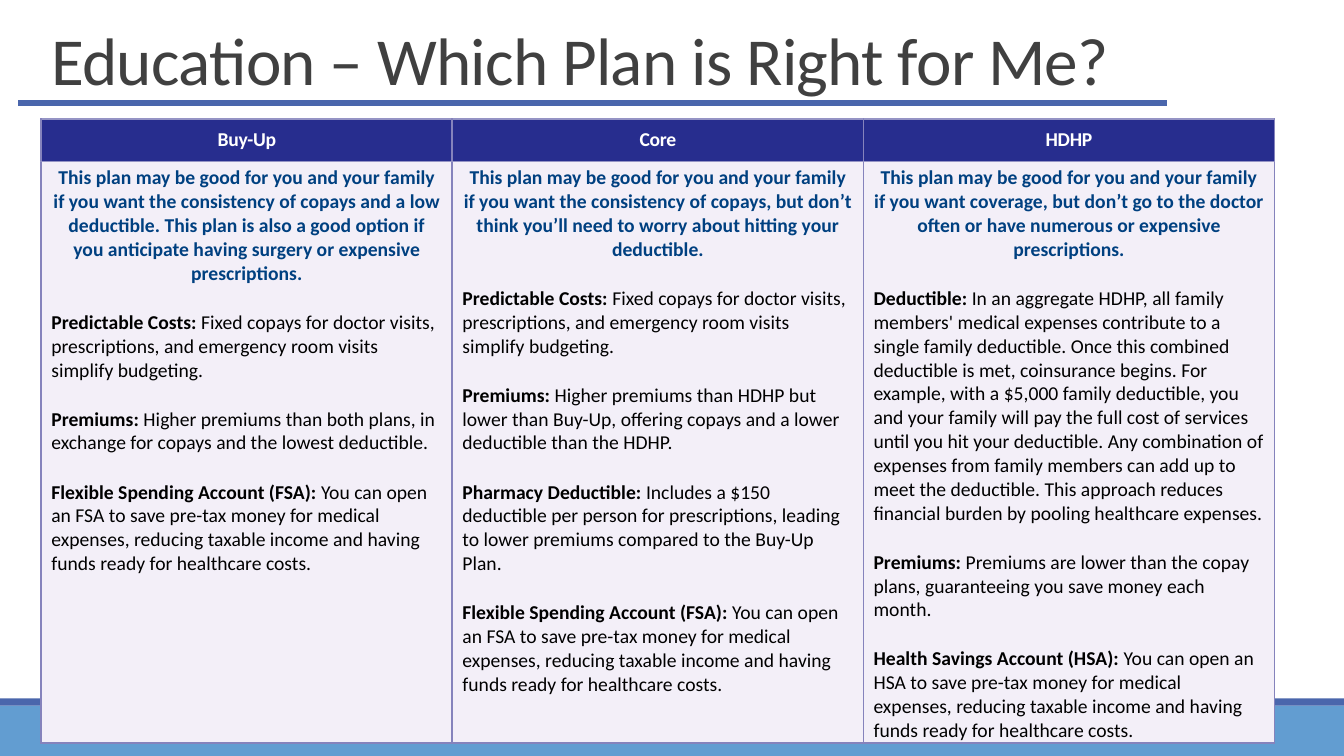
from lxml.etree import SubElement
from pptx import Presentation
from pptx.dml.color import RGBColor
from pptx.enum.shapes import MSO_CONNECTOR, MSO_SHAPE
from pptx.enum.text import MSO_ANCHOR, MSO_AUTO_SIZE, PP_ALIGN
from pptx.oxml.ns import qn
from pptx.util import Cm, Pt

FONT = "Calibri"
BLUE, SKY, NAVY, LILAC = "4A66AC", "629DD1", "272D8E", "F3EFF8"
SIDE, TOP = ("8583BC", 1.5), ("9594C5", 1)

VISITS = ("Fixed copays for doctor visits, prescriptions, and emergency room "
          "visits simplify budgeting.")
SAVINGS = ("You can open an {} to save pre-tax money for medical expenses, reducing "
           "taxable income and having funds ready for healthcare costs.")
FSA = ("Flexible Spending Account (FSA):", SAVINGS.format("FSA"))
HSA = ("Health Savings Account (HSA):", SAVINGS.format("HSA"))
GOOD_FOR = "This plan may be good for you and your family if you want "

# Each plan: name, summary, labelled points
PLANS = [
    ("Buy-Up",
     GOOD_FOR + "the consistency of copays and a low deductible. This plan is also a "
     "good option if you anticipate having surgery or expensive prescriptions.",
     [("Predictable Costs:", VISITS),
      ("Premiums:", "Higher premiums than both plans, in exchange for copays and the "
       "lowest deductible."),
      FSA]),
    ("Core",
     GOOD_FOR + "the consistency of copays, but don’t think you’ll need to worry "
     "about hitting your deductible.",
     [("Predictable Costs:", VISITS),
      ("Premiums:", "Higher premiums than HDHP but lower than Buy-Up, offering copays "
       "and a lower deductible than the HDHP."),
      ("Pharmacy Deductible:", "Includes a $150 deductible per person for "
       "prescriptions, leading to lower premiums compared to the Buy-Up Plan."),
      FSA]),
    ("HDHP",
     GOOD_FOR + "coverage, but don’t go to the doctor often or have numerous or "
     "expensive prescriptions.",
     [("Deductible:", "In an aggregate HDHP, all family members' medical expenses "
       "contribute to a single family deductible. Once this combined deductible is "
       "met, coinsurance begins. For example, with a $5,000 family deductible, you and "
       "your family will pay the full cost of services until you hit your deductible. "
       "Any combination of expenses from family members can add up to meet the "
       "deductible. This approach reduces financial burden by pooling healthcare "
       "expenses."),
      ("Premiums:", "Premiums are lower than the copay plans, guaranteeing you save "
       "money each month."),
      HSA]),
]


def rgb(color):
    return RGBColor.from_string(color)


def set_font(font, size, color, bold=None):
    font.name, font.size, font.bold = FONT, Pt(size), bold
    font.color.rgb = rgb(color)


def add_run(p, text, spacing=0):
    """Add a run whose letter spacing is given in points."""
    r = p.add_run()
    r.text = text
    if spacing:
        r.font._element.set("spc", str(round(spacing * 100)))
    return r


def add_band(slide, x, y, w, h, color):
    sp = slide.shapes.add_shape(MSO_SHAPE.RECTANGLE, Cm(x), Cm(y), Cm(w), Cm(h))
    sp.shadow.inherit = False
    sp.fill.solid()
    sp.fill.fore_color.rgb = rgb(color)
    sp.line.fill.background()


def add_footer(slide, x, y, w, h):
    edge = 0.18
    add_band(slide, x, y + edge, w, h - edge, SKY)
    add_band(slide, x, y, w, edge, BLUE)


def add_title(slide, x, y, w, h, text):
    title = slide.shapes.title
    title.left, title.top, title.width, title.height = Cm(x), Cm(y), Cm(w), Cm(h)
    tf = title.text_frame
    tf.auto_size = MSO_AUTO_SIZE.NONE
    tf.vertical_anchor = MSO_ANCHOR.BOTTOM
    p = tf.paragraphs[0]
    p.alignment, p.line_spacing = PP_ALIGN.LEFT, 0.85
    set_font(p.font, 48, "404040")
    add_run(p, text, -0.5)

    rule_y = Cm(y + h - 0.03)
    rule = slide.shapes.add_connector(
        MSO_CONNECTOR.STRAIGHT, Cm(x - 0.58), rule_y, Cm(x + 28.37), rule_y)
    rule.line.color.rgb = rgb(BLUE)
    rule.line.width = Pt(4)
    SubElement(rule._element.spPr, qn("a:effectLst"))


def style_cell(cell, fill, top, bottom):
    """Set borders, then fill, in the order the cell's XML needs."""
    tcPr = cell._tc.get_or_add_tcPr()
    for side, (color, width) in zip("LRTB", (SIDE, SIDE, top, bottom)):
        ln = SubElement(tcPr, qn(f"a:ln{side}"), w=str(Pt(width)))
        SubElement(SubElement(ln, qn("a:solidFill")), qn("a:srgbClr"), val=color)
    cell.fill.solid()
    cell.fill.fore_color.rgb = rgb(fill)


def fill_header(cell, name):
    style_cell(cell, NAVY, TOP, TOP)
    cell.vertical_anchor = MSO_ANCHOR.MIDDLE
    cell.margin_top = cell.margin_bottom = 0
    p = cell.text_frame.paragraphs[0]
    p.alignment = PP_ALIGN.CENTER
    set_font(p.font, 14, "FFFFFF", True)
    add_run(p, name, -0.2)


def fill_body(cell, summary, points):
    style_cell(cell, LILAC, TOP, SIDE)
    cell.vertical_anchor = MSO_ANCHOR.TOP
    cell.margin_top, cell.margin_bottom = Cm(0.13), 0
    tf = cell.text_frame
    p = tf.paragraphs[0]
    p.alignment = PP_ALIGN.CENTER
    set_font(p.font, 14, "004080", True)
    add_run(p, summary)
    for label, text in points:
        p = tf.add_paragraph()
        p.space_before = Pt(18)
        set_font(p.font, 14, "000000", False)
        add_run(p, label).font.bold = True
        add_run(p, " " + text)


def add_plan_table(slide, x, y, w, h):
    header_h = 1.06
    table = slide.shapes.add_table(
        2, len(PLANS), Cm(x), Cm(y), Cm(w), Cm(h)).table
    table.rows[0].height, table.rows[1].height = Cm(header_h), Cm(h - header_h)
    for col, (name, summary, points) in enumerate(PLANS):
        table.columns[col].width = Cm(w / len(PLANS))
        fill_header(table.cell(0, col), name)
        fill_body(table.cell(1, col), summary, points)


def main():
    prs = Presentation()
    prs.slide_width, prs.slide_height = Cm(33.87), Cm(19.05)
    slide = prs.slides.add_slide(prs.slide_layouts[5])
    add_footer(slide, 0, 17.6, 33.87, 1.45)
    add_title(slide, 1.04, 1, 32.83, 1.62, "Education – Which Plan is Right for Me?")
    add_plan_table(slide, 1.04, 3, 31.08, 15.67)
    prs.save("out.pptx")


if __name__ == "__main__":
    main()
